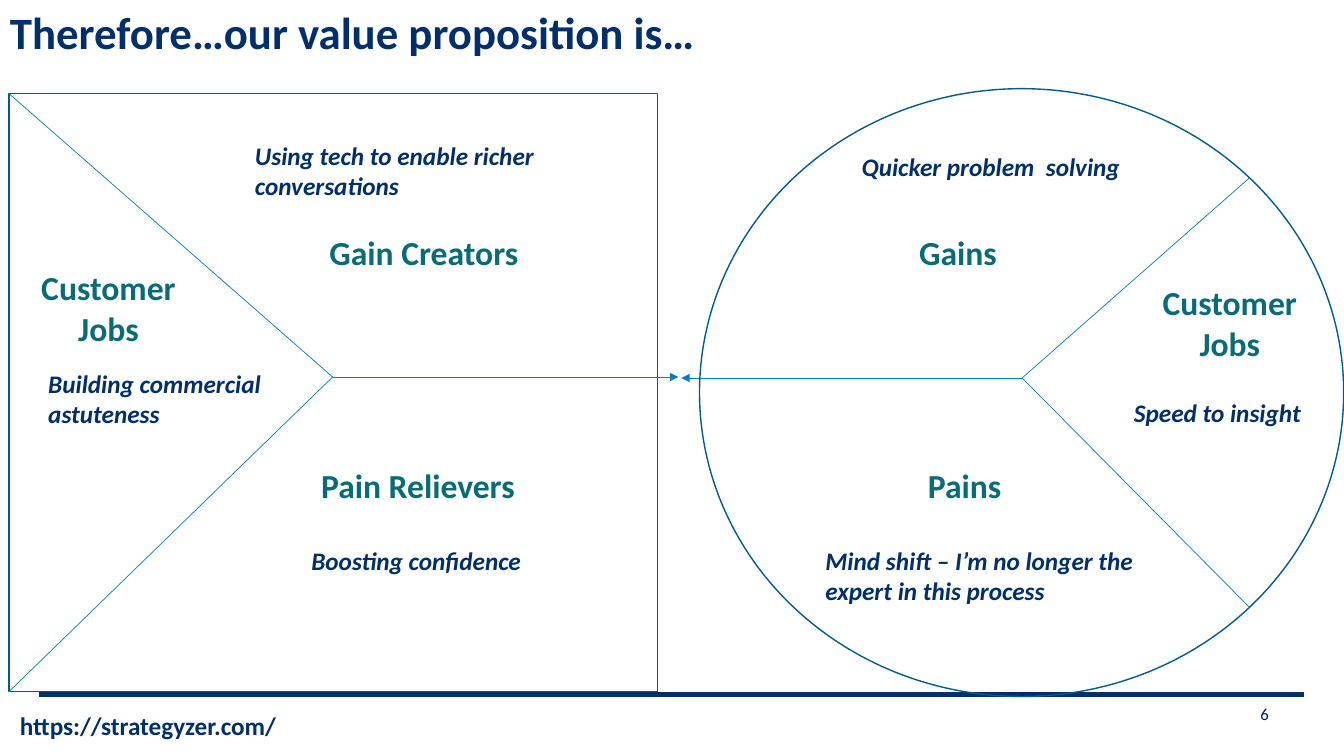
from typing import NamedTuple, Optional

from lxml.etree import SubElement
from pptx import Presentation
from pptx.dml.color import RGBColor
from pptx.enum.shapes import MSO_CONNECTOR as Connector, MSO_SHAPE as Shape
from pptx.enum.text import MSO_ANCHOR as Anchor, PP_ALIGN as Align
from pptx.oxml.ns import qn
from pptx.util import Inches, Pt

WIDTH, HEIGHT = Inches(13.33), Inches(7.5)
FONT = "Calibri"
COLORS = {
    "navy": "002F6B",
    "number": "002060",
    "teal": "086C77",
    "outline": "005C90",
    "divider": "007DC3",
}


class Point(NamedTuple):
    """A place in percent of the slide's width and height."""
    x: float
    y: float


class Box(NamedTuple):
    """Left, top, width and height in percent of the slide."""
    x: float
    y: float
    w: float
    h: float


class Style(NamedTuple):
    size: int
    color: str
    bold: bool = True
    italic: bool = False


class Label(NamedTuple):
    text: str
    box: Box
    style: Style
    align: Align = Align.LEFT
    anchor: Anchor = Anchor.TOP


class Panel(NamedTuple):
    """One half of the canvas: an outline split by three lines from a hub."""
    shape: Shape
    box: Box
    hub: Point
    corners: tuple[Point, Point]
    arrow_x: float


TITLE = Style(32, "navy")
HEADING = Style(24, "teal")
FOOTER = Style(18, "navy")
NOTE = Style(18, "navy", italic=True)
NUMBER = Style(12, "number", bold=False)

ONE_LINE, TWO_LINES = 5.33, 9.47
HEAD_LINE, HEAD_LINES = 6.67, 12.13
GAIN_Y, PAIN_Y, PAIN_NOTE_Y = 30, 60.8, 71.47
NOTE_W, WIDE_NOTE_W = 19.2, 29.1

PANELS = [
    Panel(Shape.RECTANGLE, Box(0.68, 12.4, 48.23, 79.07), Point(24.75, 49.87),
          (Point(0.68, 12.4), Point(0.68, 91.47)), 50.48),
    Panel(Shape.OVAL, Box(52.05, 11.73, 47.93, 80.4), Point(76.05, 50),
          (Point(93, 23.47), Point(93, 80.4)), 50.7),
]

PAGE_NUMBER = Label("6", Box(91.13, 91.87, 5.93, 5.2), NUMBER, Align.CENTER, Anchor.MIDDLE)

LABELS = [
    Label("Gains", Box(67.65, GAIN_Y, 8.25, HEAD_LINE), HEADING),
    Label("Customer Jobs", Box(83.85, 36.67, 15.3, HEAD_LINES), HEADING, Align.CENTER),
    Label("Pains", Box(67.65, PAIN_Y, 8.25, HEAD_LINE), HEADING, Align.CENTER),
    Label("Gain Creators", Box(23.78, GAIN_Y, 18, HEAD_LINE), HEADING),
    Label("Customer Jobs", Box(1.13, 34.67, 13.88, HEAD_LINES), HEADING, Align.CENTER),
    Label("Pain Relievers", Box(22.13, PAIN_Y, 17.93, HEAD_LINE), HEADING, Align.CENTER),
    Label("Therefore…our value proposition is…", Box(0, 0, 75, 8.53), TITLE),
    Label("https://strategyzer.com/", Box(0.75, 93.33, 24, 5.6), FOOTER),
    Label("Using tech to enable richer conversations",
          Box(18.23, 17.87, WIDE_NOTE_W, TWO_LINES), NOTE),
    Label("Building commercial astuteness", Box(2.85, 48, NOTE_W, TWO_LINES), NOTE),
    Label("Boosting confidence", Box(22.43, PAIN_NOTE_Y, NOTE_W, ONE_LINE), NOTE),
    Label("Quicker problem  solving", Box(63.38, 19.33, WIDE_NOTE_W, ONE_LINE), NOTE),
    Label("Mind shift – I’m no longer the expert in this process",
          Box(60.68, PAIN_NOTE_Y, WIDE_NOTE_W, TWO_LINES), NOTE),
    Label("Speed to insight", Box(83.63, 51.87, 15, ONE_LINE), NOTE),
]


def rgb(name: str) -> RGBColor:
    return RGBColor.from_string(COLORS[name])


def across(percent: float) -> int:
    return round(WIDTH * percent / 100)


def down(percent: float) -> int:
    return round(HEIGHT * percent / 100)


def place(box: Box) -> tuple[int, int, int, int]:
    return across(box.x), down(box.y), across(box.w), down(box.h)


def add_line(s, start: Point, end: Point, color: str, width: float,
             head: Optional[str] = None) -> None:
    line = s.shapes.add_connector(Connector.STRAIGHT, across(start.x), down(start.y),
                                  across(end.x), down(end.y))
    line.line.color.rgb = rgb(color)
    line.line.width = Pt(width)
    if head:
        SubElement(line.line._get_or_add_ln(), qn("a:tailEnd"), type=head)
    SubElement(line._element.spPr, qn("a:effectLst"))


def add_panel(s, panel: Panel) -> None:
    sp = s.shapes.add_shape(panel.shape, *place(panel.box))
    sp.shadow.inherit = False
    sp.fill.background()
    sp.line.color.rgb = rgb("outline")
    sp.line.width = Pt(1)
    for corner in panel.corners:
        add_line(s, panel.hub, corner, "divider", 0.5)
    add_line(s, panel.hub, Point(panel.arrow_x, panel.hub.y), "divider", 0.5, "triangle")


def add_label(s, label: Label) -> None:
    tf = s.shapes.add_textbox(*place(label.box)).text_frame
    tf.word_wrap = True
    tf.vertical_anchor = label.anchor
    p = tf.paragraphs[0]
    p.alignment = label.align
    r = p.add_run()
    r.text = label.text
    r.font.name = FONT
    r.font.size = Pt(label.style.size)
    r.font.bold = label.style.bold
    r.font.italic = label.style.italic
    r.font.color.rgb = rgb(label.style.color)


def main() -> None:
    prs = Presentation()
    prs.slide_width, prs.slide_height = WIDTH, HEIGHT
    s = prs.slides.add_slide(prs.slide_layouts[6])
    add_line(s, Point(2.93, 91.87), Point(97.05, 91.87), "navy", 3)
    add_label(s, PAGE_NUMBER)
    for panel in PANELS:
        add_panel(s, panel)
    for label in LABELS:
        add_label(s, label)
    prs.save("out.pptx")


if __name__ == "__main__":
    main()
